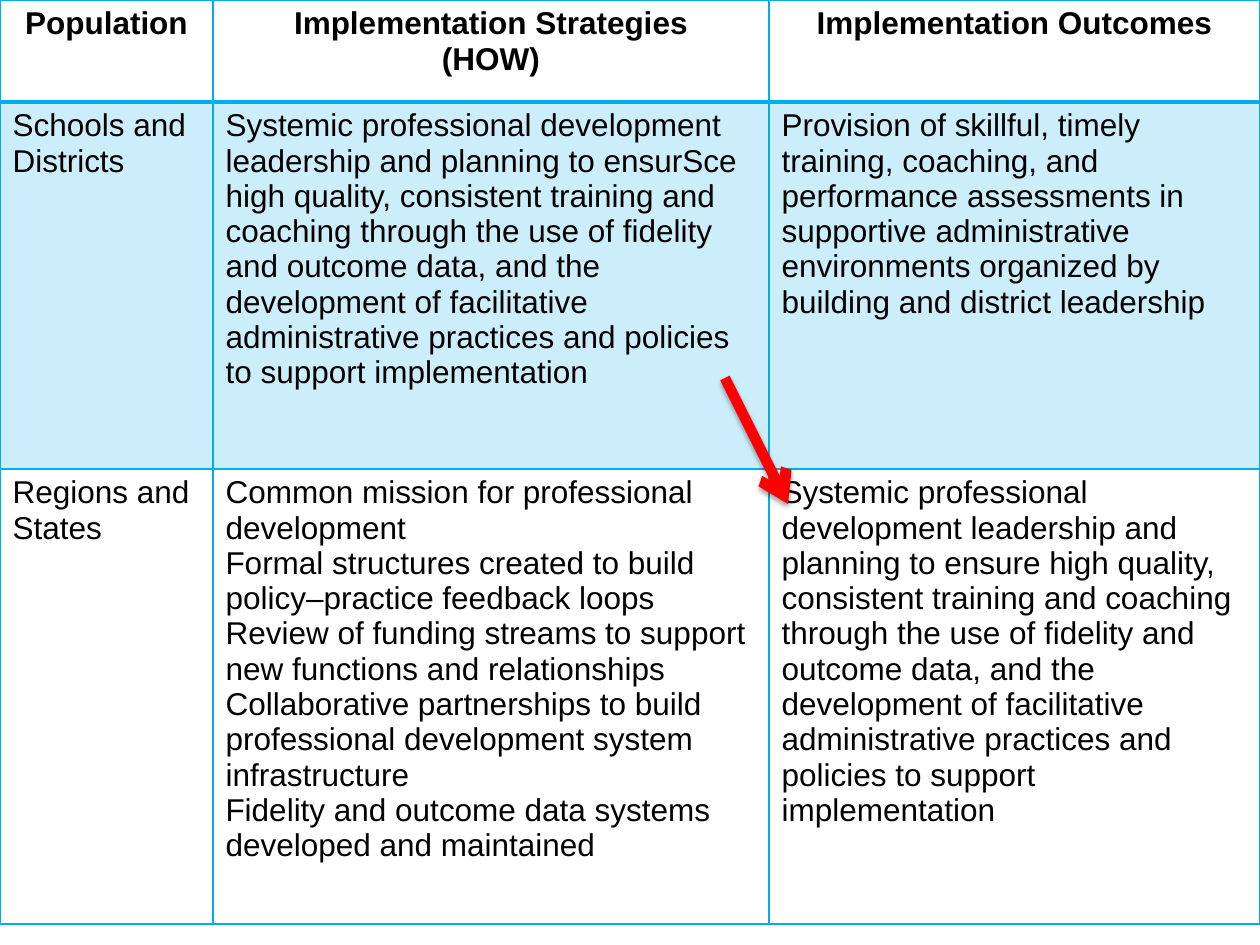
from typing import NamedTuple

from lxml.etree import SubElement
from pptx import Presentation
from pptx.dml.color import RGBColor
from pptx.enum.shapes import MSO_CONNECTOR as Connector
from pptx.enum.text import PP_ALIGN as Align
from pptx.oxml import parse_xml
from pptx.oxml.ns import nsdecls, qn
from pptx.util import Emu, Pt

BLACK = RGBColor(0x00, 0x00, 0x00)
WHITE = RGBColor(0xFF, 0xFF, 0xFF)
CYAN = RGBColor(0x00, 0xAE, 0xEF)
RED = RGBColor(0xFF, 0x00, 0x00)

FONT = "Arial"
PX_PER_INCH = 126
SLIDE_SIZE = (1260, 945)
COLUMN_WIDTHS = (213, 556, 491)


class Row(NamedTuple):
    """One table row: its height in px, its look and the paragraphs of each cell."""

    height: int
    cells: tuple[tuple[str, ...], ...]
    fill: RGBColor | None = None
    opacity: int = 100
    heading: bool = False


ROWS = (
    Row(102, (
        ("Population",),
        ("Implementation Strategies", "(HOW)"),
        ("Implementation Outcomes",),
    ), heading=True),
    Row(367, (
        ("Schools and Districts",),
        ("Systemic professional development leadership and planning to ensurSce "
         "high quality, consistent training and coaching through the use of fidelity "
         "and outcome data, and the development of facilitative administrative "
         "practices and policies to support implementation",),
        ("Provision of skillful, timely training, coaching, and performance "
         "assessments in supportive administrative environments organized by "
         "building and district leadership",),
    ), fill=CYAN, opacity=20),
    Row(455, (
        ("Regions and States",),
        ("Common mission for professional development",
         "Formal structures created to build policy–practice feedback loops "
         "Review of funding streams to support new functions and relationships "
         "Collaborative partnerships to build professional development system "
         "infrastructure",
         "Fidelity and outcome data systems developed and maintained"),
        ("Systemic professional development leadership and planning to ensure "
         "high quality, consistent training and coaching through the use of fidelity "
         "and outcome data, and the development of facilitative administrative "
         "practices and policies to support implementation",),
    ), fill=WHITE),
)


def px(length: int) -> Emu:
    """Turn px into EMU."""
    return Emu(round(length * 914400 / PX_PER_INCH))


def write_cell(cell, paragraphs: tuple[str, ...], heading: bool) -> None:
    """Write the paragraphs of a cell."""
    frame = cell.text_frame
    for index, text in enumerate(paragraphs):
        paragraph = frame.add_paragraph() if index else frame.paragraphs[0]
        paragraph.alignment = Align.CENTER if heading else Align.LEFT
        run = paragraph.add_run()
        run.text = text
        run.font.name = FONT
        run.font.size = Pt(18)
        run.font.bold = heading
        run.font.color.rgb = BLACK


def draw_borders(cell, top: int, bottom: int) -> None:
    """Draw the four borders of a cell, with widths in points."""
    properties = cell._tc.get_or_add_tcPr()
    for side, width in (("L", 1), ("R", 1), ("T", top), ("B", bottom)):
        border = SubElement(properties, qn(f"a:ln{side}"), w=str(Pt(width)))
        color_fill = SubElement(border, qn("a:solidFill"))
        SubElement(color_fill, qn("a:srgbClr"), val=str(CYAN))


def fill_cell(cell, color: RGBColor | None, opacity: int) -> None:
    """Fill a cell with a colour at an opacity in percent, or leave it clear."""
    if color is None:
        cell.fill.background()
        return
    cell.fill.solid()
    cell.fill.fore_color.rgb = color
    if opacity < 100:
        tint = cell._tc.tcPr.find(f"{qn('a:solidFill')}/{qn('a:srgbClr')}")
        SubElement(tint, qn("a:alpha"), val=str(opacity * 1000))


def draw_table(slide, rows: tuple[Row, ...]) -> None:
    """Draw the table of strategies and outcomes by population."""
    table = slide.shapes.add_table(
        len(rows), len(COLUMN_WIDTHS), 0, 0,
        px(sum(COLUMN_WIDTHS)), px(sum(row.height for row in rows)),
    ).table
    table.first_row = table.horz_banding = False
    for column, width in zip(table.columns, COLUMN_WIDTHS):
        column.width = px(width)
    for index, row in enumerate(rows):
        table.rows[index].height = px(row.height)
        below_heading = index > 0 and rows[index - 1].heading
        for cell, paragraphs in zip(table.rows[index].cells, row.cells):
            write_cell(cell, paragraphs, row.heading)
            draw_borders(cell, 2 if below_heading else 1, 2 if row.heading else 1)
            fill_cell(cell, row.fill, row.opacity)


def draw_arrow(slide, start: tuple[int, int], end: tuple[int, int]) -> None:
    """Draw the red arrow with its soft shadow."""
    arrow = slide.shapes.add_connector(
        Connector.STRAIGHT, *map(px, start), *map(px, end))
    arrow.line.color.rgb = RED
    arrow.line.width = Pt(6)
    SubElement(arrow.line._get_or_add_ln(), qn("a:tailEnd"), type="arrow")
    arrow._element.spPr.append(parse_xml(
        f'<a:effectLst {nsdecls("a")}>'
        f'<a:outerShdw blurRad="{Pt(3.1)}" dist="{Pt(1.6)}" dir="5400000" rotWithShape="0">'
        f'<a:srgbClr val="{BLACK}"><a:alpha val="38000"/></a:srgbClr>'
        '</a:outerShdw></a:effectLst>'))


def main() -> None:
    """Build the slide and save it."""
    presentation = Presentation()
    presentation.slide_width, presentation.slide_height = map(px, SLIDE_SIZE)
    slide = presentation.slides.add_slide(presentation.slide_layouts[6])
    draw_table(slide, ROWS)
    draw_arrow(slide, (725, 378), (788, 504))
    presentation.save("out.pptx")


if __name__ == "__main__":
    main()
